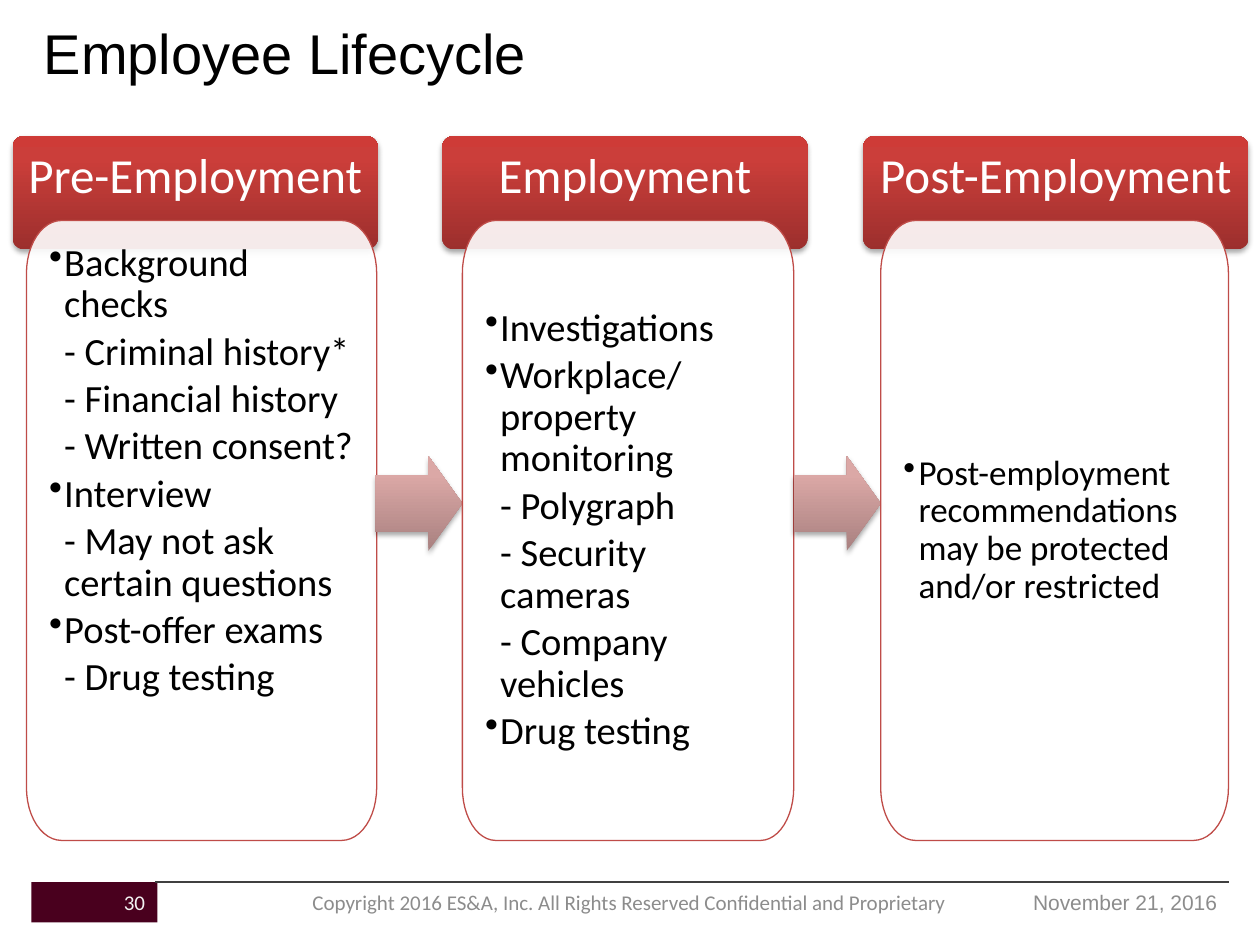
from math import cos, pi, sin

from lxml.etree import SubElement
from pptx import Presentation
from pptx.dml.color import RGBColor
from pptx.enum.shapes import MSO_CONNECTOR, MSO_SHAPE
from pptx.enum.text import MSO_ANCHOR, PP_ALIGN
from pptx.oxml import parse_xml
from pptx.oxml.ns import nsdecls, qn
from pptx.util import Inches, Pt

WHITE = RGBColor(0xFF, 0xFF, 0xFF)
BLACK = RGBColor(0x00, 0x00, 0x00)
PLUM = RGBColor(0x49, 0x00, 0x1E)
RULE_GRAY = RGBColor(0x40, 0x40, 0x40)
FOOTER_GRAY = RGBColor(0x8C, 0x8C, 0x8C)
NUMBER_GRAY = RGBColor(0xF2, 0xF2, 0xF2)
PANEL_RED = RGBColor(0xBF, 0x4C, 0x48)
HEADER_STOPS = [
    (0, RGBColor(0x9C, 0x2F, 0x2D)),
    (80, RGBColor(0xCB, 0x3E, 0x3A)),
    (100, RGBColor(0xCE, 0x3B, 0x37)),
]
ARROW_STOPS = [
    (0, RGBColor(0xA9, 0x81, 0x80)),
    (80, RGBColor(0xDB, 0xA8, 0xA6)),
    (100, RGBColor(0xDD, 0xA7, 0xA6)),
]

HEADER_TOP, HEADER_HEIGHT = 1.08, 0.9
PANEL_TOP, PANEL_HEIGHT = 1.75, 4.92
FOOTER_TOP, FOOTER_HEIGHT = 7, 0.32

COLUMNS = [
    ("Pre-Employment", 0.1, 2.9, 0.21, 2.78, 22, MSO_ANCHOR.TOP, [
        "Background checks", "- Criminal history*", "- Financial history",
        "- Written consent?", "Interview", "- May not ask certain questions",
        "Post-offer exams", "- Drug testing"]),
    ("Employment", 3.51, 2.9, 3.67, 2.63, 22, MSO_ANCHOR.MIDDLE, [
        "Investigations", "Workplace/ property monitoring", "- Polygraph",
        "- Security cameras", "- Company vehicles", "Drug testing"]),
    ("Post-Employment", 6.85, 3.06, 6.99, 2.76, 20, MSO_ANCHOR.MIDDLE, [
        "Post-employment recommendations may be protected and/or restricted"]),
]


def add_glossy_shape(kind, left, top, width, height, stops):
    shape = slide.shapes.add_shape(
        kind, Inches(left), Inches(top), Inches(width), Inches(height))
    shape.line.fill.background()
    shape.shadow.inherit = False
    properties = shape.element.spPr
    stop_xml = "".join(
        f'<a:gs pos="{position * 1000}"><a:srgbClr val="{color}"/></a:gs>'
        for position, color in stops)
    properties.find(qn("a:prstGeom")).addnext(parse_xml(
        f'<a:gradFill {nsdecls("a")} rotWithShape="1"><a:gsLst>{stop_xml}</a:gsLst>'
        '<a:lin ang="16200000" scaled="0"/></a:gradFill>'))
    properties.find(qn("a:effectLst")).append(parse_xml(
        f'<a:outerShdw {nsdecls("a")} blurRad="{Pt(3.1)}" dist="{Pt(1.8)}" dir="5400000" '
        'rotWithShape="0"><a:srgbClr val="000000"><a:alpha val="35000"/></a:srgbClr>'
        '</a:outerShdw>'))
    return shape


def style_text(paragraph, text, size, font, color, alignment):
    paragraph.text = text
    paragraph.alignment = alignment
    paragraph.font.size = Pt(size)
    for run in paragraph.runs:
        run.font.size = Pt(size)
        run.font.name = font
        run.font.color.rgb = color


presentation = Presentation()
presentation.slide_width = Inches(10)
presentation.slide_height = Inches(7.5)
slide = presentation.slides.add_slide(presentation.slide_layouts[6])

number_block = slide.shapes.add_shape(
    MSO_SHAPE.RECTANGLE, Inches(0.25), Inches(FOOTER_TOP), Inches(1), Inches(FOOTER_HEIGHT))
number_block.fill.solid()
number_block.fill.fore_color.rgb = PLUM
number_block.line.fill.background()
number_block.shadow.inherit = False

footer_rule = slide.shapes.add_connector(
    MSO_CONNECTOR.STRAIGHT, Inches(1.23), Inches(FOOTER_TOP), Inches(9.75), Inches(FOOTER_TOP))
footer_rule.line.color.rgb = RULE_GRAY
footer_rule.line.width = Pt(0.75)
SubElement(footer_rule.element.spPr, qn("a:effectLst"))

for index, column in enumerate(COLUMNS):
    heading, header_left, header_width, left, width, size, anchor, items = column

    header = add_glossy_shape(
        MSO_SHAPE.ROUNDED_RECTANGLE, header_left, HEADER_TOP, header_width, HEADER_HEIGHT,
        HEADER_STOPS)
    header.adjustments[0] = 0.1
    frame = header.text_frame
    frame.word_wrap = True
    frame.vertical_anchor = MSO_ANCHOR.TOP
    frame.margin_left = frame.margin_right = frame.margin_top = Inches(0.09)
    frame.margin_bottom = Inches(0.27)
    style_text(frame.paragraphs[0], heading, 28, "Calibri", WHITE, PP_ALIGN.CENTER)
    frame.paragraphs[0].line_spacing = 0.9

    radius_x, radius_y = width * 0.1, 0.42
    right, bottom = left + width, PANEL_TOP + PANEL_HEIGHT
    corner_centers = [
        (right - radius_x, bottom - radius_y), (left + radius_x, bottom - radius_y),
        (left + radius_x, PANEL_TOP + radius_y), (right - radius_x, PANEL_TOP + radius_y)]
    points = []
    for quarter, (center_x, center_y) in enumerate(corner_centers):
        for step in range(13):
            angle = (quarter + step / 12) * pi / 2
            points.append((Inches(center_x + radius_x * cos(angle)),
                           Inches(center_y + radius_y * sin(angle))))
    builder = slide.shapes.build_freeform(*points[0])
    builder.add_line_segments(points[1:], close=True)
    panel = builder.convert_to_shape()
    panel.shadow.inherit = False
    panel.fill.solid()
    panel.fill.fore_color.rgb = WHITE
    panel_color = panel.element.spPr.find(qn("a:solidFill")).find(qn("a:srgbClr"))
    SubElement(panel_color, qn("a:alpha"), val="90000")
    panel.line.color.rgb = PANEL_RED
    panel.line.width = Pt(0.75)

    frame = panel.text_frame
    frame.word_wrap = True
    frame.vertical_anchor = anchor
    frame.margin_left = frame.margin_right = Inches(0.18)
    frame.margin_top = frame.margin_bottom = Inches(0.18)
    for position, item in enumerate(items):
        paragraph = frame.add_paragraph() if position else frame.paragraphs[0]
        is_detail = item.startswith("-")
        paragraph.level = 2 if is_detail else 1
        properties = paragraph._p.get_or_add_pPr()
        properties.set("marL", str(Inches(0.12)))
        properties.set("indent", str(0 if is_detail else Inches(-0.12)))
        if is_detail:
            SubElement(properties, qn("a:buNone"))
        else:
            SubElement(properties, qn("a:buChar"), char="•")
        style_text(paragraph, item, size, "Calibri", BLACK, PP_ALIGN.LEFT)
        paragraph.line_spacing = 0.9
        paragraph.space_after = Pt(size * 0.15)

    if index < len(COLUMNS) - 1:
        next_panel_left = COLUMNS[index + 1][3]
        arrow = add_glossy_shape(
            MSO_SHAPE.RIGHT_ARROW, next_panel_left - 0.69, 3.62, 0.69, 0.75, ARROW_STOPS)
        arrow.adjustments[0] = 0.6
        arrow.adjustments[1] = 0.39

LABELS = [
    ("Employee Lifecycle", 0.25, 0.1, 8, 1.2, 32, "Arial", BLACK, PP_ALIGN.LEFT),
    ("November 21, 2016", 7.67, FOOTER_TOP, 2.09, FOOTER_HEIGHT, 12, "Arial", FOOTER_GRAY,
     PP_ALIGN.RIGHT),
    ("Copyright 2016 ES&A, Inc. All Rights Reserved Confidential and Proprietary",
     2.33, FOOTER_TOP, 5.33, FOOTER_HEIGHT, 12, "Calibri", FOOTER_GRAY, PP_ALIGN.CENTER),
    ("30", 0.25, FOOTER_TOP, 1, FOOTER_HEIGHT, 12, "Calibri", NUMBER_GRAY, PP_ALIGN.RIGHT),
]
for text, left, top, width, height, size, font, color, alignment in LABELS:
    label = slide.shapes.add_textbox(Inches(left), Inches(top), Inches(width), Inches(height))
    frame = label.text_frame
    frame.word_wrap = True
    frame.vertical_anchor = MSO_ANCHOR.MIDDLE if top == FOOTER_TOP else MSO_ANCHOR.TOP
    style_text(frame.paragraphs[0], text, size, font, color, alignment)

presentation.save("out.pptx")
